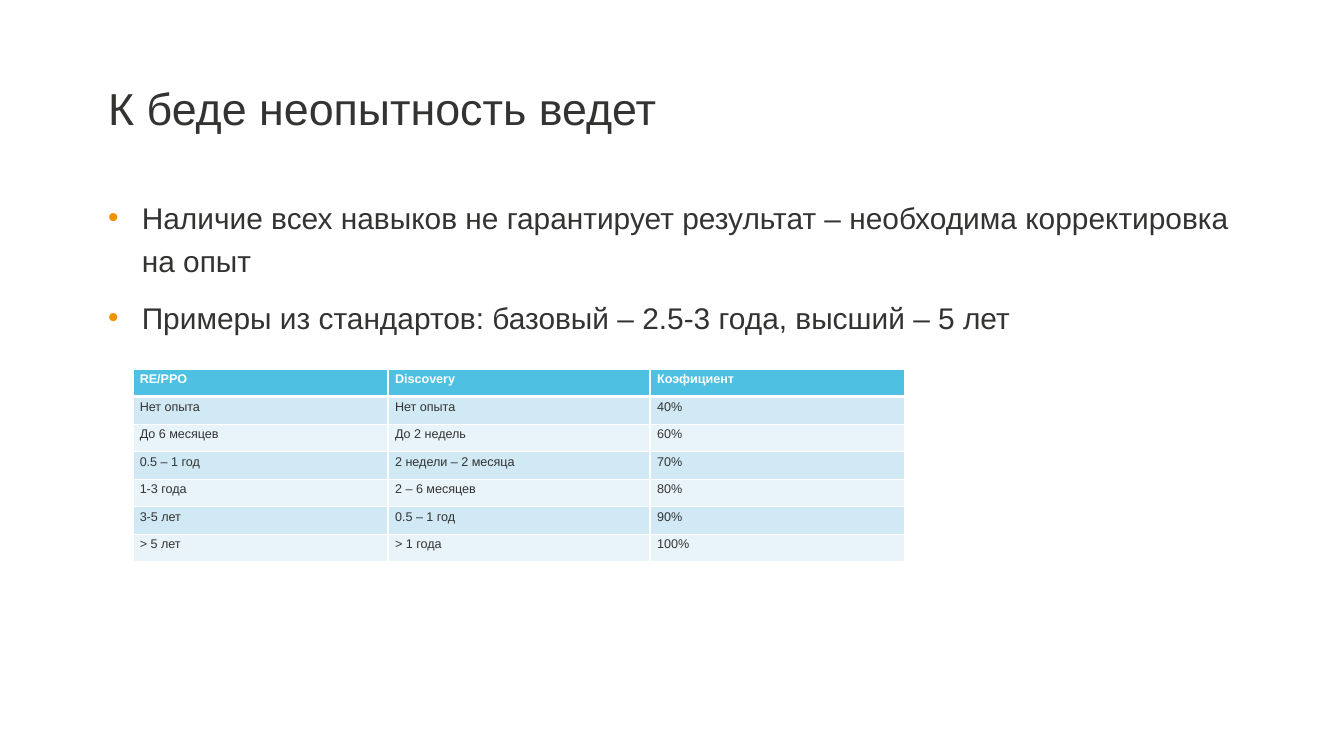
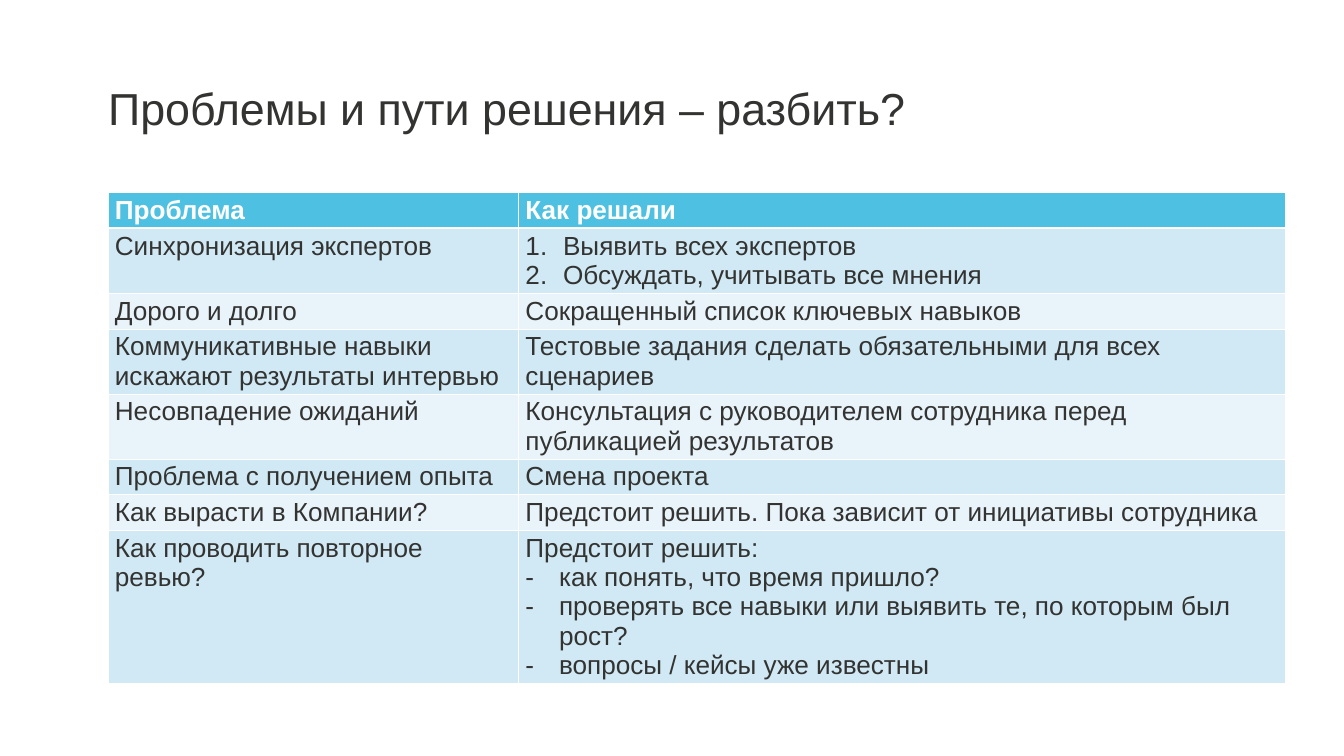
"""Build two slides on experience ratings, with their problems and fixes."""
import pptx
import pptx.dml.color
import pptx.enum.text
import pptx.oxml.ns
import pptx.util
from lxml import etree
from pptx.util import Inches, Pt

COLORS = {
    "text": "333332",
    "white": "FFFFFF",
    "head": "4EC1E2",
    "odd": "D0E9F4",
    "even": "E9F4FA",
    "bullet": "F39200",
}
FONT = "Arial"
LEFT = 1.61
TOP = 2.86

LEVELS = [
    ["RE/PPO", "", "Коэфициент"],
    ["Нет опыта", "", "40%"],
    ["До 6 месяцев", "", "60%"],
    ["0.5 – 1 год", "", "70%"],
    ["1-3 года", "", "80%"],
    ["3-5 лет", "", "90%"],
    ["> 5 лет", "", "100%"],
]
DISCOVERY = ["Discovery", "Нет опыта", "До 2 недель", "2 недели – 2 месяца",
             "2 – 6 месяцев", "0.5 – 1 год", "> 1 года"]
ISSUES = [
    ["Проблема", "Как решали"],
    ["Синхронизация экспертов",
     [("1.", "Выявить всех экспертов"),
      ("1.", "Обсуждать, учитывать все мнения")]],
    ["Дорого и долго", "Сокращенный список ключевых навыков"],
    ["Коммуникативные навыки искажают результаты интервью",
     "Тестовые задания сделать обязательными для всех сценариев"],
    ["Несовпадение ожиданий",
     "Консультация с руководителем сотрудника перед публикацией результатов"],
    ["Проблема с получением опыта", "Смена проекта"],
    ["Как вырасти в Компании?",
     "Предстоит решить. Пока зависит от инициативы сотрудника"],
    ["Как проводить повторное ревью?",
     [("", "Предстоит решить:"),
      ("-", "как понять, что время пришло?"),
      ("-", "проверять все навыки или выявить те, по которым был рост?"),
      ("-", "вопросы / кейсы уже известны")]],
]


def rgb(name):
    return pptx.dml.color.RGBColor.from_string(COLORS[name])


def add_node(parent, tag, **attrs):
    return etree.SubElement(parent, pptx.oxml.ns.qn(tag), **attrs)


def style(para, size, color="text", bold=False):
    font = para.font
    font.name, font.size, font.bold = FONT, Pt(size), bold
    font.color.rgb = rgb(color)


def add_mark(para, mark, indent, color=None):
    props = para._p.get_or_add_pPr()
    props.set("marL", str(Inches(indent)))
    props.set("indent", str(-Inches(indent)))
    if color:
        add_node(add_node(props, "a:buClr"), "a:srgbClr", val=COLORS[color])
    add_node(props, "a:buFont", typeface=FONT)
    if mark == "1.":
        add_node(props, "a:buAutoNum", type="arabicPeriod")
    else:
        add_node(props, "a:buChar", char=mark)


def place(holder, left, top, width, height):
    holder.left, holder.top = Inches(left), Inches(top)
    holder.width, holder.height = Inches(width), Inches(height)
    frame = holder.text_frame
    frame.margin_left = frame.margin_right = 0
    frame.margin_top = frame.margin_bottom = 0
    frame.word_wrap = True
    frame.auto_size = pptx.enum.text.MSO_AUTO_SIZE.NONE
    frame.vertical_anchor = pptx.enum.text.MSO_ANCHOR.TOP
    return frame


def add_slide(deck, layout, title):
    slide = deck.slides.add_slide(deck.slide_layouts[layout])
    frame = place(slide.shapes.title, LEFT, 1.25, 12.96, 0.93)
    frame.text = title
    para = frame.paragraphs[0]
    para.alignment = pptx.enum.text.PP_ALIGN.LEFT
    para.line_spacing = 0.96
    style(para, 48)
    return slide


def fill_list(slide, items):
    frame = place(slide.placeholders[1], LEFT, TOP, 16.77, 7.01)
    frame.text = "\n".join(items)
    for num, para in enumerate(frame.paragraphs):
        para.line_spacing = 1.2
        para.space_before = Pt(15 if num else 0)
        add_mark(para, "•", 0.5, "bullet")
        style(para, 32)


def add_edges(cell, row):
    props = cell._tc.get_or_add_tcPr()
    for side in "LRTB":
        thick = (row, side) in ((0, "B"), (1, "T"))
        line = add_node(props, "a:ln" + side, w=str(Pt(3 if thick else 1)))
        add_node(add_node(line, "a:solidFill"), "a:srgbClr", val=COLORS["white"])


def fill_cell(cell, content, row, size):
    parts = [("", content)] if isinstance(content, str) else content
    cell.text = "\n".join(text for _, text in parts)
    for para, (mark, _) in zip(cell.text_frame.paragraphs, parts):
        if mark:
            add_mark(para, mark, 0.56 if mark == "1." else 0.5)
        style(para, size, "text" if row else "white", not row)
    add_edges(cell, row)
    cell.fill.solid()
    shade = ("odd" if row % 2 else "even") if row else "head"
    cell.fill.fore_color.rgb = rgb(shade)


def add_grid(slide, left, top, widths, rows, size):
    high = 0.41
    table = slide.shapes.add_table(
        len(rows), len(widths), Inches(left), Inches(top),
        Inches(sum(widths)), Inches(high * len(rows))).table
    table.horz_banding = False
    for col, width in zip(table.columns, widths):
        col.width = Inches(width)
    for row, items in enumerate(rows):
        table.rows[row].height = Inches(high)
        for col, content in enumerate(items):
            fill_cell(table.cell(row, col), content, row, size)


def main():
    deck = pptx.Presentation()
    deck.slide_width, deck.slide_height = Inches(20), Inches(11.25)

    slide = add_slide(deck, 1, "К беде неопытность ведет")
    fill_list(slide, [
        "Наличие всех навыков не гарантирует результат – "
        "необходима корректировка на опыт",
        "Примеры из стандартов: базовый – 2.5-3 года, высший – 5 лет",
    ])
    add_grid(slide, 1.98, 5.49, [3.78, 3.92, 3.78], LEVELS, 13.5)
    add_grid(slide, 5.78, 5.49, [3.88], [[text] for text in DISCOVERY], 13.5)

    slide = add_slide(deck, 5, "Проблемы и пути решения – разбить?")
    add_grid(slide, LEFT, TOP, [6.11, 11.41], ISSUES, 28)

    deck.save("out.pptx")


if __name__ == "__main__":
    main()
